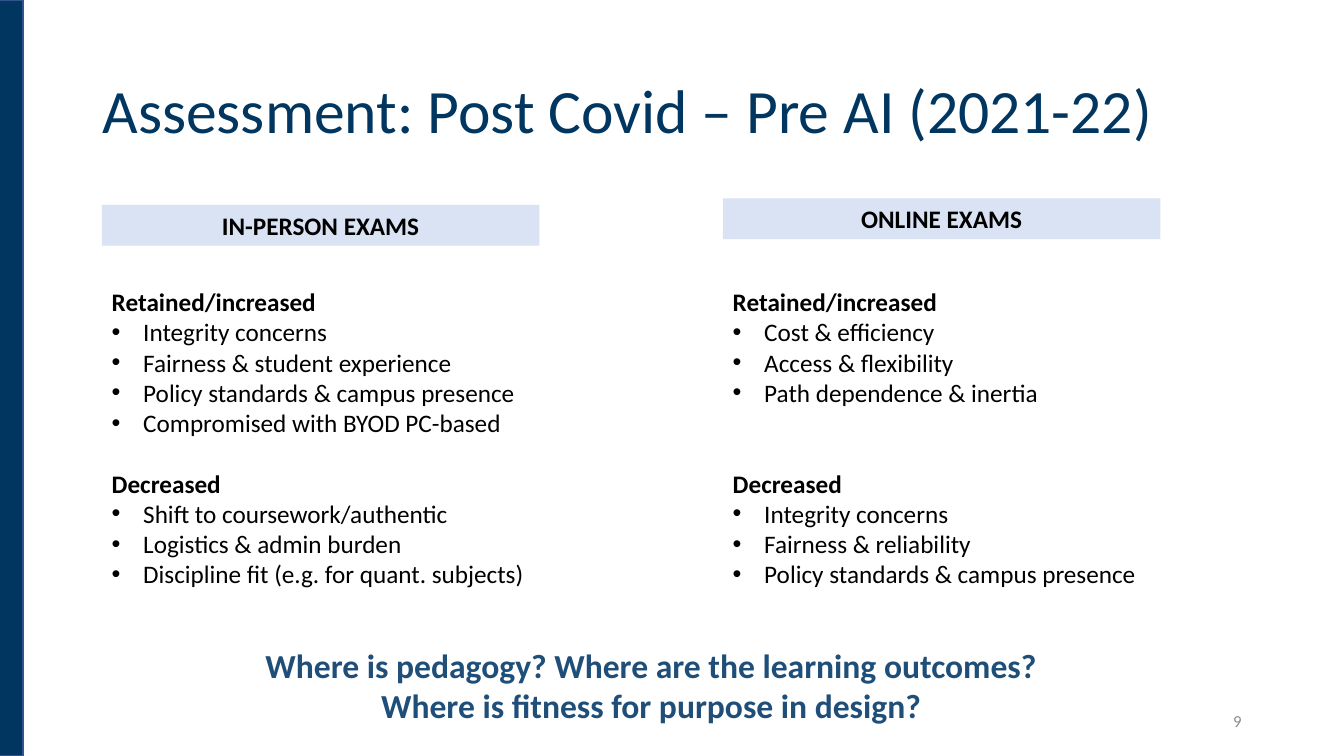
import pptx
import pptx.util
import pptx.dml.color
import pptx.enum.shapes
import pptx.enum.text
import pptx.oxml.ns
import lxml.etree

Pt = pptx.util.Pt
ALIGN = pptx.enum.text.PP_ALIGN
ANCHOR = pptx.enum.text.MSO_ANCHOR
RECTANGLE = pptx.enum.shapes.MSO_SHAPE.RECTANGLE

TITLE = "Assessment: Post Covid – Pre AI (2021-22)"
QUESTIONS = [
    "Where is pedagogy? Where are the learning outcomes?",
    "Where is fitness for purpose in design?",
]
PAGE_NUMBER = "9"
COLUMNS = [
    {
        "heading": "IN-PERSON EXAMS",
        "left": 72.7,
        "heading_top": 146.4,
        "groups": [
            ("Retained/increased", [
                "Integrity concerns",
                "Fairness & student experience",
                "Policy standards & campus presence",
                "Compromised with BYOD PC-based",
            ]),
            ("Decreased", [
                "Shift to coursework/authentic",
                "Logistics & admin burden",
                "Discipline fit (e.g. for quant. subjects)",
            ]),
        ],
    },
    {
        "heading": "ONLINE EXAMS",
        "left": 516.3,
        "heading_top": 141.7,
        "groups": [
            ("Retained/increased", [
                "Cost & efficiency",
                "Access & flexibility",
                "Path dependence & inertia",
            ]),
            ("Decreased", [
                "Integrity concerns",
                "Fairness & reliability",
                "Policy standards & campus presence",
            ]),
        ],
    },
]
GROUP_TOPS = [201, 330.7]
LINE_HEIGHT = 21.8
BOX_PADDING = 7.2
NAVY, BLACK = "00365F", "000000"


def color(value):
    return pptx.dml.color.RGBColor.from_string(value)


def style(font, size, value, bold=False):
    font.name = "Calibri"
    font.size = Pt(size)
    font.bold = bold
    font.color.rgb = color(value)


def add_span(para, text, size, value, bold=False):
    span = para.add_run()
    span.text = text
    style(span.font, size, value, bold)


def add_bullet(para):
    properties = para._p.get_or_add_pPr()
    properties.set("marL", str(Pt(22.5)))
    properties.set("indent", str(-Pt(22.5)))
    font = lxml.etree.SubElement(properties, pptx.oxml.ns.qn("a:buFont"))
    font.set("typeface", "Arial")
    bullet = lxml.etree.SubElement(properties, pptx.oxml.ns.qn("a:buChar"))
    bullet.set("char", "•")


def add_box(page, left, top, width, height, anchor=ANCHOR.TOP):
    box = page.shapes.add_textbox(Pt(left), Pt(top), Pt(width), Pt(height))
    box.text_frame.word_wrap = True
    box.text_frame.vertical_anchor = anchor
    return box.text_frame


def add_rectangle(page, left, top, width, height, fill):
    shape = page.shapes.add_shape(RECTANGLE, Pt(left), Pt(top), Pt(width), Pt(height))
    shape.shadow.inherit = False
    shape.fill.solid()
    shape.fill.fore_color.rgb = color(fill)
    return shape


def add_title(page):
    title = page.shapes.title
    title.left, title.top, title.width, title.height = Pt(66), Pt(28.75), Pt(828), Pt(104.4)
    frame = title.text_frame
    frame.word_wrap = True
    frame.vertical_anchor = ANCHOR.MIDDLE
    para = frame.paragraphs[0]
    para.alignment = ALIGN.LEFT
    para.line_spacing = 0.9
    add_span(para, TITLE, 44, NAVY)


def add_heading(page, column):
    bar = add_rectangle(page, column["left"], column["heading_top"], 312.6, 29.1, "DAE3F3")
    bar.line.fill.background()
    bar.text_frame.vertical_anchor = ANCHOR.TOP
    para = bar.text_frame.paragraphs[0]
    para.alignment = ALIGN.CENTER
    add_span(para, column["heading"], 18, BLACK, True)


def add_group(page, left, top, label, items):
    height = LINE_HEIGHT * (len(items) + 1) + BOX_PADDING
    frame = add_box(page, left, top, 370.8, height)
    add_span(frame.paragraphs[0], label, 18, BLACK, True)
    for item in items:
        para = frame.add_paragraph()
        add_bullet(para)
        add_span(para, item, 18, BLACK)


def add_questions(page):
    para = add_box(page, 144, 457.2, 642.2, 65.4).paragraphs[0]
    para.alignment = ALIGN.CENTER
    for index, question in enumerate(QUESTIONS):
        if index:
            para.add_line_break()
        add_span(para, question, 24, "1F4E79", True)


def main():
    deck = pptx.Presentation()
    deck.slide_width, deck.slide_height = Pt(960), Pt(540)
    page = deck.slides.add_slide(deck.slide_layouts[5])

    band = add_rectangle(page, -2.9, 0, 19.4, 540, NAVY)
    band.line.color.rgb = color("325491")
    band.line.width = Pt(1)

    add_title(page)
    for column in COLUMNS:
        add_heading(page, column)
        for top, (label, items) in zip(GROUP_TOPS, column["groups"]):
            add_group(page, column["left"], top, label, items)
    add_questions(page)

    number = add_box(page, 678, 500.5, 216, 28.75, ANCHOR.MIDDLE).paragraphs[0]
    number.alignment = ALIGN.RIGHT
    add_span(number, PAGE_NUMBER, 12, "8C8C8C")

    deck.save("out.pptx")


if __name__ == "__main__":
    main()
